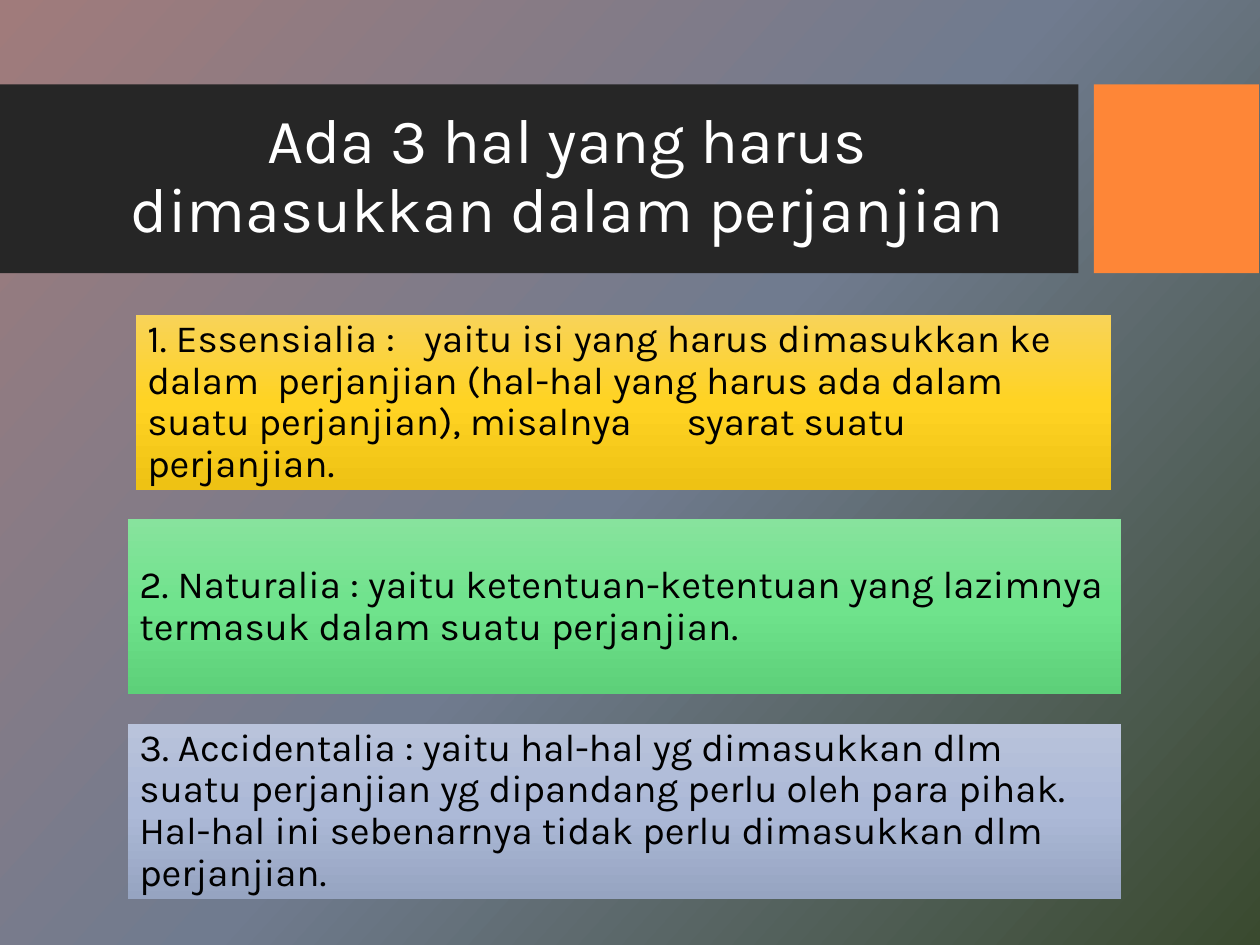
import pptx
import pptx.dml.color
import pptx.enum.shapes
import pptx.enum.text
import pptx.oxml.ns
import pptx.util
from lxml import etree
from pptx.dml.color import RGBColor
from pptx.util import Cm

FONT = "Karla"
WHITE = RGBColor(0xFF, 0xFF, 0xFF)
BLACK = RGBColor(0x00, 0x00, 0x00)
CHARCOAL = RGBColor(0x26, 0x26, 0x26)
ORANGE = RGBColor(0xFE, 0x86, 0x37)
BACKDROP = (RGBColor(0xA0, 0x7B, 0x7B), RGBColor(0x70, 0x7B, 0x8F), RGBColor(0x3A, 0x4A, 0x2F))
YELLOW = (RGBColor(0xF8, 0xD3, 0x58), RGBColor(0xFF, 0xD3, 0x23), RGBColor(0xEE, 0xC2, 0x14))
GREEN = (RGBColor(0x87, 0xE3, 0x9D), RGBColor(0x6F, 0xE3, 0x8C), RGBColor(0x5D, 0xD0, 0x79))
BLUE = (RGBColor(0xB9, 0xC3, 0xDB), RGBColor(0xAC, 0xB9, 0xD7), RGBColor(0x96, 0xA4, 0xC1))

TITLE = "Ada 3 hal yang harus dimasukkan dalam perjanjian"
# left and width in cm, gradient, text
ELEMENTS = [
    (2.74, 19.66, YELLOW,
     "1. Essensialia : \t yaitu isi yang harus dimasukkan ke dalam  perjanjian "
     "(hal-hal yang harus ada dalam suatu perjanjian), misalnya \tsyarat suatu perjanjian."),
    (2.58, 20.02, GREEN,
     "2. Naturalia : yaitu ketentuan-ketentuan yang lazimnya termasuk dalam suatu perjanjian."),
    (2.58, 20.02, BLUE,
     "3. Accidentalia : yaitu hal-hal yg dimasukkan dlm suatu perjanjian yg dipandang perlu "
     "oleh para pihak. Hal-hal ini sebenarnya tidak perlu dimasukkan dlm perjanjian."),
]
FIRST_TOP, STEP, CARD_HEIGHT = 6.35, 4.12, 3.53
TAB_STOPS = (5.4, 10.87)


def set_gradient(fill, colors, clockwise_angle):
    """Spread the colours evenly along a linear gradient."""
    fill.gradient()
    fill.gradient_angle = 360 - clockwise_angle
    qn = pptx.oxml.ns.qn
    stops = fill.gradient_stops[0]._gs.getparent()
    for stop in list(stops):
        stops.remove(stop)
    for index, color in enumerate(colors):
        position = index * 100000 // (len(colors) - 1)
        stop = etree.SubElement(stops, qn("a:gs"), pos=str(position))
        etree.SubElement(stop, qn("a:srgbClr"), val=str(color))


def add_tab_stops(paragraph, positions):
    qn = pptx.oxml.ns.qn
    tabs = etree.SubElement(paragraph._p.get_or_add_pPr(), qn("a:tabLst"))
    for position in positions:
        etree.SubElement(tabs, qn("a:tab"), pos=str(int(Cm(position))), algn="l")


def add_block(slide, left, top, width, height):
    block = slide.shapes.add_shape(
        pptx.enum.shapes.MSO_SHAPE.RECTANGLE, Cm(left), Cm(top), Cm(width), Cm(height))
    block.shadow.inherit = False
    block.line.fill.background()
    return block


def write_text(frame, text, size, color, alignment):
    frame.word_wrap = True
    frame.auto_size = pptx.enum.text.MSO_AUTO_SIZE.NONE
    frame.vertical_anchor = pptx.enum.text.MSO_ANCHOR.MIDDLE
    paragraph = frame.paragraphs[0]
    paragraph.alignment = alignment
    paragraph.line_spacing = 0.9
    if "\t" in text:
        add_tab_stops(paragraph, TAB_STOPS)
    run = paragraph.add_run()
    run.text = text
    run.font.name = FONT
    run.font.size = pptx.util.Pt(size)
    run.font.color.rgb = color


def add_header(slide):
    for left, width, color in ((0, 21.74, CHARCOAL), (22.05, 3.33, ORANGE)):
        band = add_block(slide, left, 1.7, width, 3.81)
        band.fill.solid()
        band.fill.fore_color.rgb = color
    title = slide.shapes.title
    title.left, title.top, title.width, title.height = Cm(1.42), Cm(2.08), Cm(20.04), Cm(3)
    write_text(title.text_frame, TITLE, 36, WHITE, pptx.enum.text.PP_ALIGN.CENTER)
    # The title has to lie in front of the band
    slide.shapes._spTree.append(title._element)


def add_card(slide, left, top, width, colors, text):
    card = add_block(slide, left, top, width, CARD_HEIGHT)
    set_gradient(card.fill, colors, 90)
    frame = card.text_frame
    frame.margin_left = frame.margin_right = Cm(0.23)
    frame.margin_top = frame.margin_bottom = Cm(0.23)
    write_text(frame, text, 22, BLACK, pptx.enum.text.PP_ALIGN.LEFT)


def main():
    deck = pptx.Presentation()
    deck.slide_width, deck.slide_height = Cm(25.4), Cm(19.05)
    slide = deck.slides.add_slide(deck.slide_layouts.get_by_name("Title Only"))
    set_gradient(slide.background.fill, BACKDROP, 42)
    add_header(slide)
    for index, (left, width, colors, text) in enumerate(ELEMENTS):
        add_card(slide, left, FIRST_TOP + index * STEP, width, colors, text)
    deck.save("out.pptx")


if __name__ == "__main__":
    main()
